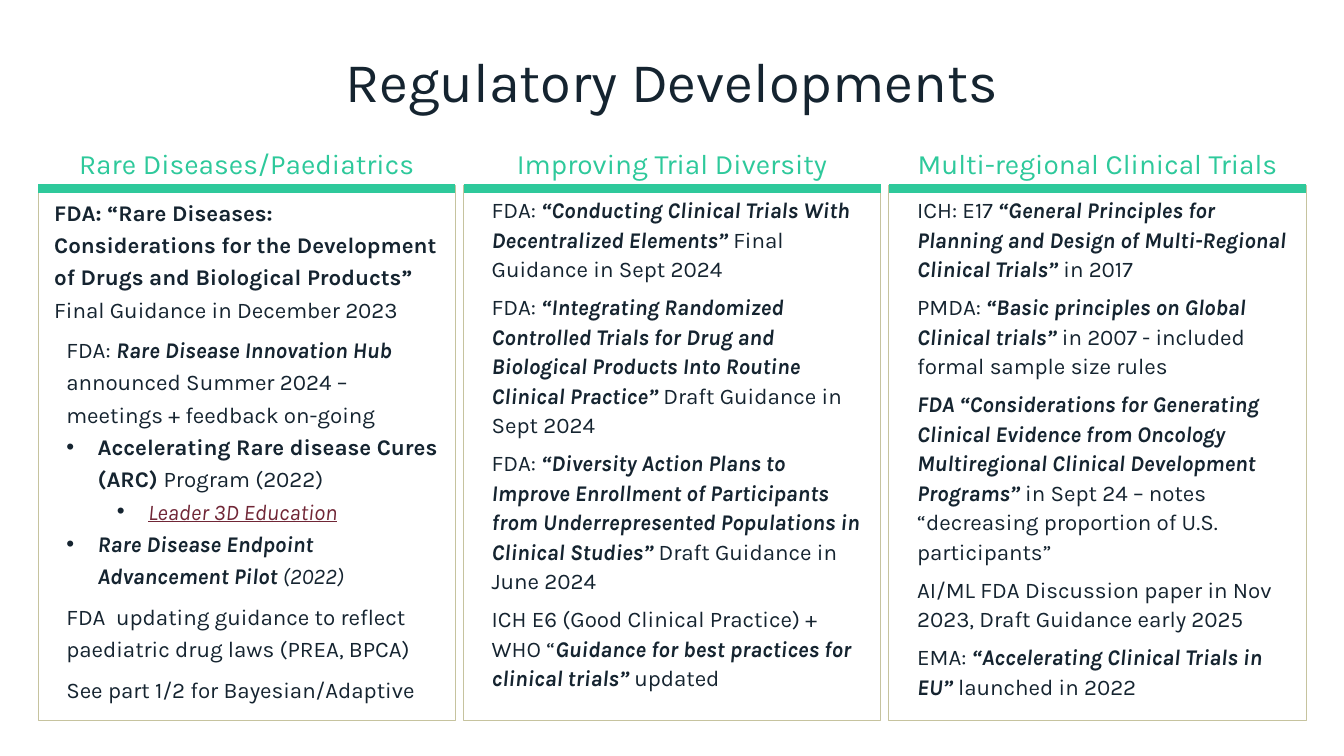
from dataclasses import dataclass

from lxml import etree
from pptx import Presentation
from pptx.dml.color import RGBColor as RGB
from pptx.enum.shapes import MSO_CONNECTOR as CONNECTOR, MSO_SHAPE as SHAPE
from pptx.enum.text import MSO_ANCHOR as ANCHOR, MSO_AUTO_SIZE as AUTO_SIZE, PP_ALIGN as ALIGN
from pptx.oxml.ns import qn
from pptx.util import Pt


@dataclass(frozen=True)
class Theme:
    font: str = "Karla"
    ink: RGB = RGB.from_string("152430")
    accent: RGB = RGB.from_string("2EC99B")
    link: RGB = RGB.from_string("702636")
    border: RGB = RGB.from_string("C6C39E")
    title: int = 40
    heading: int = 20
    body: int = 16


THEME = Theme()

# Paragraph kinds: left margin, first-line indent, space before, outline level
KINDS = {
    "lead": (0, 0, 6, 0),
    "text": (8.64, 0, 6, 0),
    "bullet": (31, -22.3, 0.1, 0),
    "sub": (67, -22.3, 0.1, 1),
}

# Each run is (text, style): b bold, i italic, u underlined link
RARE = [
    ("lead", [("FDA: “Rare Diseases: Considerations for the Development of Drugs "
               "and Biological Products” ", "b"), ("Final Guidance in December 2023", "")]),
    ("text", [("FDA: ", ""), ("Rare Disease Innovation Hub ", "bi"),
              ("announced Summer 2024 – meetings + feedback on-going", "")]),
    ("bullet", [("Accelerating Rare disease Cures (ARC) ", "b"), ("Program (2022)", "")]),
    ("sub", [("Leader 3D Education", "iu")]),
    ("bullet", [("Rare Disease Endpoint Advancement Pilot ", "bi"), ("(2022)", "i")]),
    ("text", [("FDA  updating guidance to reflect paediatric drug laws (PREA, BPCA)", "")]),
    ("text", [("See part 1/2 for Bayesian/Adaptive", "")]),
]
DIVERSITY = [
    ("text", [("FDA: ", ""), ("“Conducting Clinical Trials With Decentralized Elements” ", "bi"),
              ("Final Guidance in Sept 2024", "")]),
    ("text", [("FDA: ", ""),
              ("“Integrating Randomized Controlled Trials for Drug and Biological Products "
               "Into Routine Clinical Practice” ", "bi"), ("Draft Guidance in Sept 2024", "")]),
    ("text", [("FDA: ", ""),
              ("“Diversity Action Plans to Improve Enrollment of Participants from "
               "Underrepresented Populations in Clinical Studies” ", "bi"),
              ("Draft Guidance in June 2024", "")]),
    ("text", [("ICH E6 (Good Clinical Practice) + WHO “", ""),
              ("Guidance for best practices for clinical trials” ", "bi"), ("updated", "")]),
]
MULTI_REGIONAL = [
    ("text", [("ICH: E17 ", ""),
              ("“General Principles for Planning and Design of Multi-Regional "
               "Clinical Trials”", "bi"), (" in 2017", "")]),
    ("text", [("PMDA:", ""), (" “Basic principles on Global Clinical trials” ", "bi"),
              ("in 2007 - included formal sample size rules", "")]),
    ("text", [("FDA “Considerations for Generating Clinical Evidence from Oncology "
               "Multiregional Clinical Development Programs” ", "bi"),
              ("in Sept 24 – notes “decreasing proportion of U.S. participants”", "")]),
    ("text", [("AI/ML FDA Discussion paper in Nov 2023, Draft Guidance early 2025", "")]),
    ("text", [("EMA: ", ""), ("“Accelerating Clinical Trials in EU”", "bi"),
              (" launched in 2022", "")]),
]


def place(sp, x, y, w, h):
    sp.left, sp.top, sp.width, sp.height = Pt(x), Pt(y), Pt(w), Pt(h)


def set_frame(tf, left, top, right, bottom, anchor=ANCHOR.TOP):
    tf.word_wrap = True
    tf.auto_size = AUTO_SIZE.NONE
    tf.vertical_anchor = anchor
    tf.margin_left, tf.margin_top = Pt(left), Pt(top)
    tf.margin_right, tf.margin_bottom = Pt(right), Pt(bottom)


def style_run(r, size, color, style=""):
    r.font.name = THEME.font
    r.font.size = Pt(size)
    r.font.color.rgb = color
    r.font.bold = "b" in style
    r.font.italic = "i" in style
    r.font.underline = "u" in style


def set_bullet(p, kind):
    """Set indents and the bullet, or switch the bullet off for plain text."""
    margin, indent, _, level = KINDS[kind]
    p.level = level
    pPr = p._p.get_or_add_pPr()
    pPr.set("marL", str(Pt(margin)))
    pPr.set("indent", str(Pt(indent)))
    if not indent:
        etree.SubElement(pPr, qn("a:buNone"))
        return
    color = etree.SubElement(pPr, qn("a:buClr"))
    etree.SubElement(color, qn("a:srgbClr"), val=str(THEME.ink))
    etree.SubElement(pPr, qn("a:buFont"), typeface="Arial")
    etree.SubElement(pPr, qn("a:buChar"), char="•")


def fill_body(tf, paragraphs, spacing):
    set_frame(tf, 11.5, 5.8, 11.5, 14.4)
    for i, (kind, runs) in enumerate(paragraphs):
        p = tf.add_paragraph() if i else tf.paragraphs[0]
        set_bullet(p, kind)
        p.alignment = ALIGN.LEFT
        p.line_spacing = spacing
        p.space_before = Pt(KINDS[kind][2] if i else 0)
        p.space_after = Pt(0)
        for text, style in runs:
            r = p.add_run()
            r.text = text
            style_run(r, THEME.body, THEME.link if "u" in style else THEME.ink, style)


def add_title(s, text, x, y, w, h):
    sp = s.shapes.title
    place(sp, x, y, w, h)
    tf = sp.text_frame
    tf.text = text
    set_frame(tf, 2, 2, 2, 2, ANCHOR.BOTTOM)
    p = tf.paragraphs[0]
    p.alignment = ALIGN.CENTER
    p.line_spacing = 0.9
    style_run(p.runs[0], THEME.title, THEME.ink)


def add_heading(s, text, x, y, w, h):
    tf = s.shapes.add_textbox(Pt(x), Pt(y), Pt(w), Pt(h)).text_frame
    tf.text = text
    set_frame(tf, 7.2, 3.6, 7.2, 3.6)
    tf.paragraphs[0].alignment = ALIGN.CENTER
    style_run(tf.paragraphs[0].runs[0], THEME.heading, THEME.accent)


def add_rule(s, x, y, w):
    line = s.shapes.add_connector(CONNECTOR.STRAIGHT, Pt(x), Pt(y), Pt(x + w), Pt(y))
    line.line.color.rgb = THEME.accent
    line.line.width = Pt(6)
    etree.SubElement(line._element.spPr, qn("a:effectLst"))


def add_column(s, heading, paragraphs, spacing, x, y, w, h, body=None):
    """Draw one framed column; its text goes in the body placeholder if one is given."""
    heading_h = 31.7
    top = y + heading_h
    panel = s.shapes.add_shape(SHAPE.RECTANGLE, Pt(x), Pt(top), Pt(w), Pt(h - heading_h))
    panel.shadow.inherit = False
    panel.fill.background()
    panel.line.color.rgb = THEME.border
    panel.line.width = Pt(0.75)
    if body is not None:
        place(body, x, top, w, h - heading_h)
    fill_body((panel if body is None else body).text_frame, paragraphs, spacing)
    add_heading(s, heading, x, y, w, heading_h)
    add_rule(s, x, top + 2.2, w)


def build_slide(prs):
    s = prs.slides.add_slide(prs.slide_layouts[1])
    add_title(s, "Regulatory Developments", 41.8, 27.4, 875.5, 56.2)
    columns = [
        ("Rare Diseases/Paediatrics", RARE, 1.2, s.placeholders[1]),
        ("Improving Trial Diversity", DIVERSITY, 1.1, None),
        ("Multi-regional Clinical Trials", MULTI_REGIONAL, 1.1, None),
    ]
    left, pitch, width = 27.2, 303.9, 298.1
    for i, (heading, paragraphs, spacing, body) in enumerate(columns):
        add_column(s, heading, paragraphs, spacing,
                   left + i * pitch, 100.8, width, 414, body)


def main():
    prs = Presentation()
    prs.slide_width, prs.slide_height = Pt(960), Pt(540)
    build_slide(prs)
    prs.save("out.pptx")


if __name__ == "__main__":
    main()
